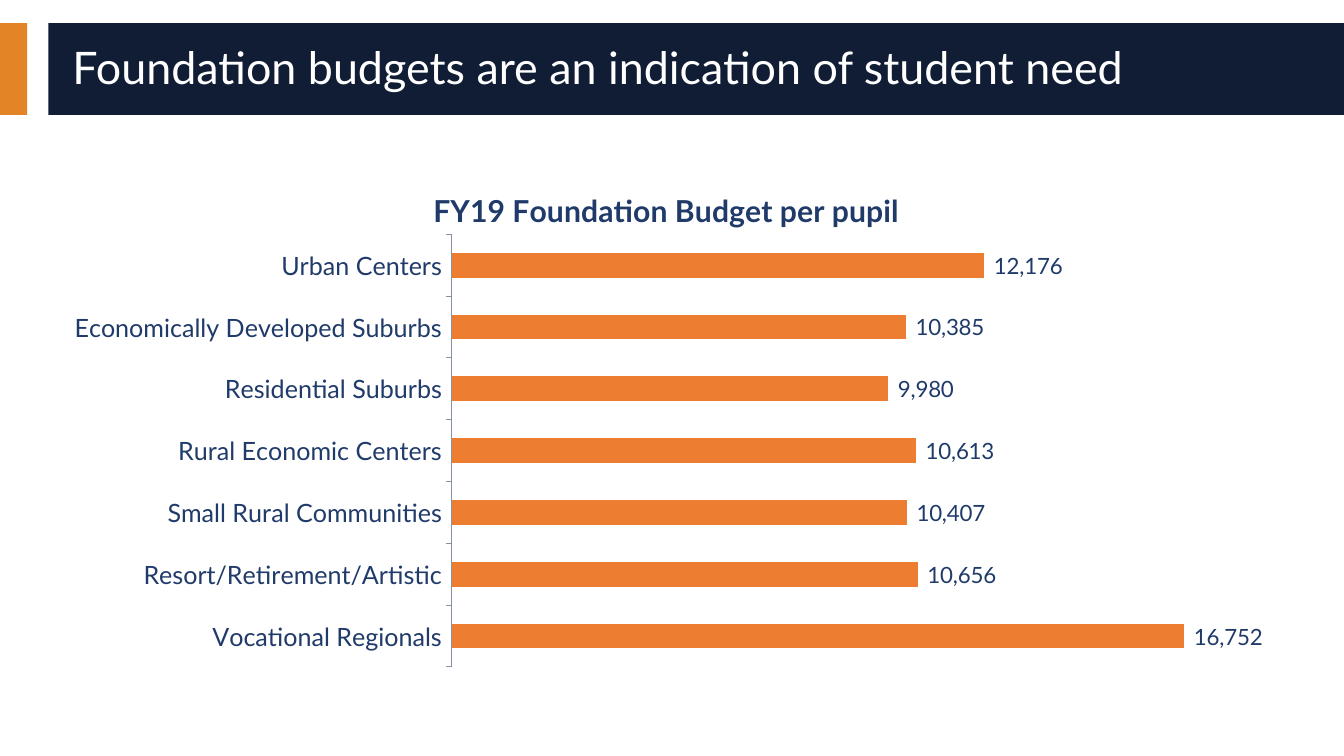
from dataclasses import dataclass

from lxml import etree
from pptx import Presentation
from pptx.chart import data as chart_data
from pptx.dml import color
from pptx.enum import chart as charts, shapes, text
from pptx.oxml import ns
from pptx import util as u


@dataclass(frozen=True)
class Theme:
    font: str = "Lato"
    navy: str = "101D35"
    amber: str = "E38526"
    bar: str = "ED7D31"
    ink: str = "203B6A"
    axis: str = "8890A5"
    white: str = "FFFFFF"
    title_size: float = 32
    chart_title_size: float = 21.6
    category_size: float = 18
    value_size: float = 16


@dataclass(frozen=True)
class Band:
    left: float
    width: float
    fill: str


THEME = Theme()
BAND_TOP, BAND_HEIGHT = 0.23, 0.91
BANDS = [Band(0, 0.27, THEME.amber), Band(0.48, 12.86, THEME.navy)]
NUMBER_FORMAT = r'_(* #,##0_);_(* \(#,##0\);_(* "-"??_);_('
BUDGETS = {
    "Urban Centers": 12176,
    "Economically Developed Suburbs": 10385,
    "Residential Suburbs": 9980,
    "Rural Economic Centers": 10613,
    "Small Rural Communities": 10407,
    "Resort/Retirement/Artistic": 10656,
    "Vocational Regionals": 16752,
}


def rgb(value: str) -> color.RGBColor:
    return color.RGBColor.from_string(value)


def style_font(font, size: float, fill: str, bold: bool = False) -> None:
    font.name = THEME.font
    font.size = u.Pt(size)
    font.bold = bold
    font.color.rgb = rgb(fill)


def draw_band(page, band: Band) -> None:
    shape = page.shapes.add_shape(
        shapes.MSO_SHAPE.RECTANGLE, u.Inches(band.left), u.Inches(BAND_TOP),
        u.Inches(band.width), u.Inches(BAND_HEIGHT))
    shape.shadow.inherit = False
    shape.fill.solid()
    shape.fill.fore_color.rgb = rgb(band.fill)
    shape.line.fill.background()


def draw_title(page) -> None:
    box = page.shapes.add_textbox(
        u.Inches(0.62), u.Inches(0.32), u.Inches(12.44), u.Inches(0.74))
    frame = box.text_frame
    frame.word_wrap = True
    frame.vertical_anchor = text.MSO_ANCHOR.MIDDLE
    para = frame.paragraphs[0]
    para.text = "Foundation budgets are an indication of student need"
    para.line_spacing = 0.9
    style_font(para.font, THEME.title_size, THEME.white)


def place_part(part, index: int, **places: float) -> None:
    """Give a chart part a manual layout, in fractions of the chart area."""
    for old in part.findall(ns.qn("c:layout")):
        part.remove(old)
    layout = etree.Element(ns.qn("c:layout"))
    part.insert(index, layout)
    manual = etree.SubElement(layout, ns.qn("c:manualLayout"))
    settings = {"xMode": "edge", "yMode": "edge", **places}
    if "w" in places:
        settings = {"layoutTarget": "inner", **settings}
    for name, value in settings.items():
        etree.SubElement(manual, ns.qn(f"c:{name}")).set("val", str(value))


def draw_chart(page) -> None:
    data = chart_data.CategoryChartData(number_format=NUMBER_FORMAT)
    data.categories = list(BUDGETS)
    data.add_series("Series 1", list(BUDGETS.values()))
    chart = page.shapes.add_chart(
        charts.XL_CHART_TYPE.BAR_CLUSTERED, u.Inches(0.52), u.Inches(1.61),
        u.Inches(12.06), u.Inches(5.11), data).chart
    style_font(chart.font, THEME.category_size, THEME.ink)
    chart.has_legend = False

    chart.has_title = True
    para = chart.chart_title.text_frame.paragraphs[0]
    para.text = "FY19 Foundation Budget per pupil"
    style_font(para.font, THEME.chart_title_size, THEME.ink, bold=True)

    categories = chart.category_axis
    categories.reverse_order = True
    categories.major_tick_mark = charts.XL_TICK_MARK.OUTSIDE
    categories.format.line.color.rgb = rgb(THEME.axis)
    categories.format.line.width = u.Pt(0.75)
    values = chart.value_axis
    values.visible = False
    values.has_major_gridlines = False
    values.minimum_scale, values.maximum_scale = 0, 18000

    plot = chart.plots[0]
    plot.gap_width = 150
    plot.vary_by_categories = False
    series = plot.series[0]
    series.format.fill.solid()
    series.format.fill.fore_color.rgb = rgb(THEME.bar)
    labels = series.data_labels
    labels.show_value = True
    labels.number_format = NUMBER_FORMAT
    labels.number_format_is_linked = False
    labels.position = charts.XL_LABEL_POSITION.OUTSIDE_END
    style_font(labels.font, THEME.value_size, THEME.ink)

    body = chart.element if hasattr(chart, "element") else chart._chartSpace
    place_part(body.find(".//" + ns.qn("c:plotArea")), 0,
               x=0.33, y=0.14, w=0.65, h=0.84)
    place_part(body.find(".//" + ns.qn("c:title")), 1, x=0.31, y=0.04)


def main() -> None:
    deck = Presentation()
    deck.slide_width, deck.slide_height = u.Inches(13.33), u.Inches(7.5)
    page = deck.slides.add_slide(deck.slide_layouts[6])
    for band in BANDS:
        draw_band(page, band)
    draw_title(page)
    draw_chart(page)
    deck.save("out.pptx")


if __name__ == "__main__":
    main()
